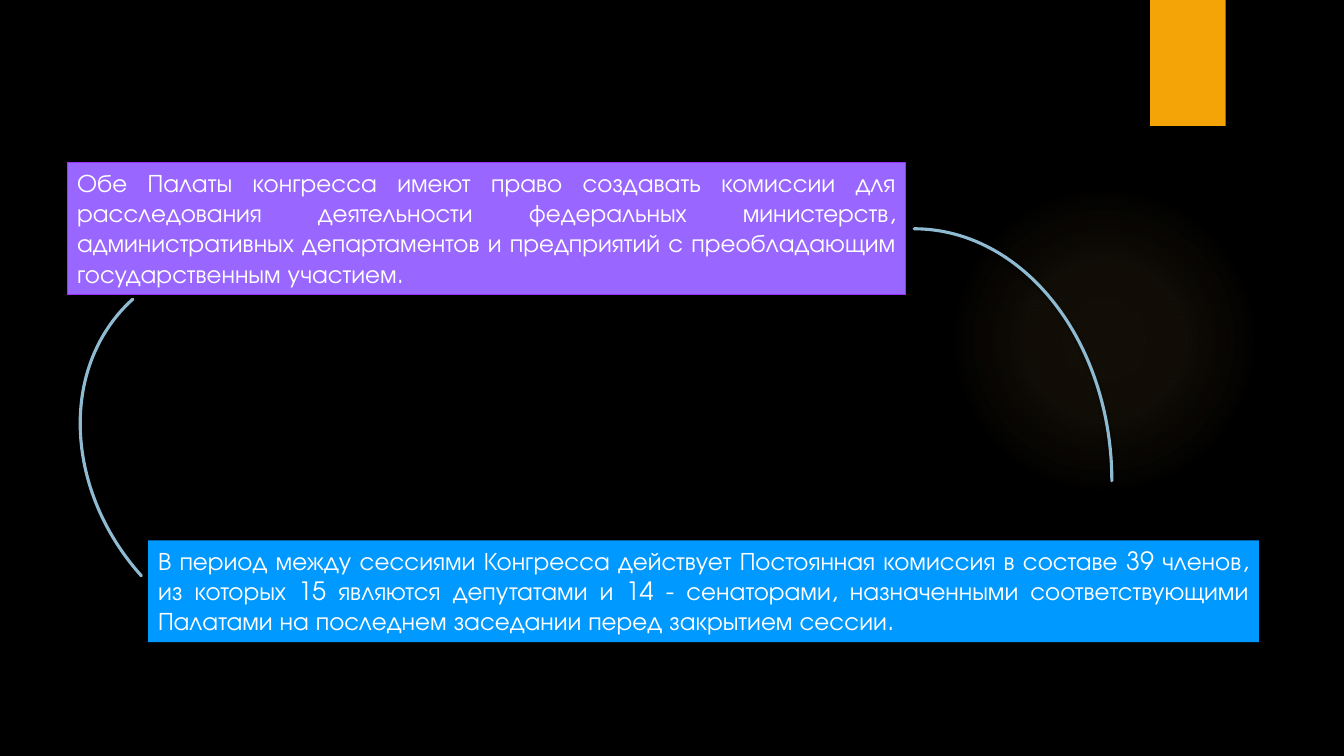
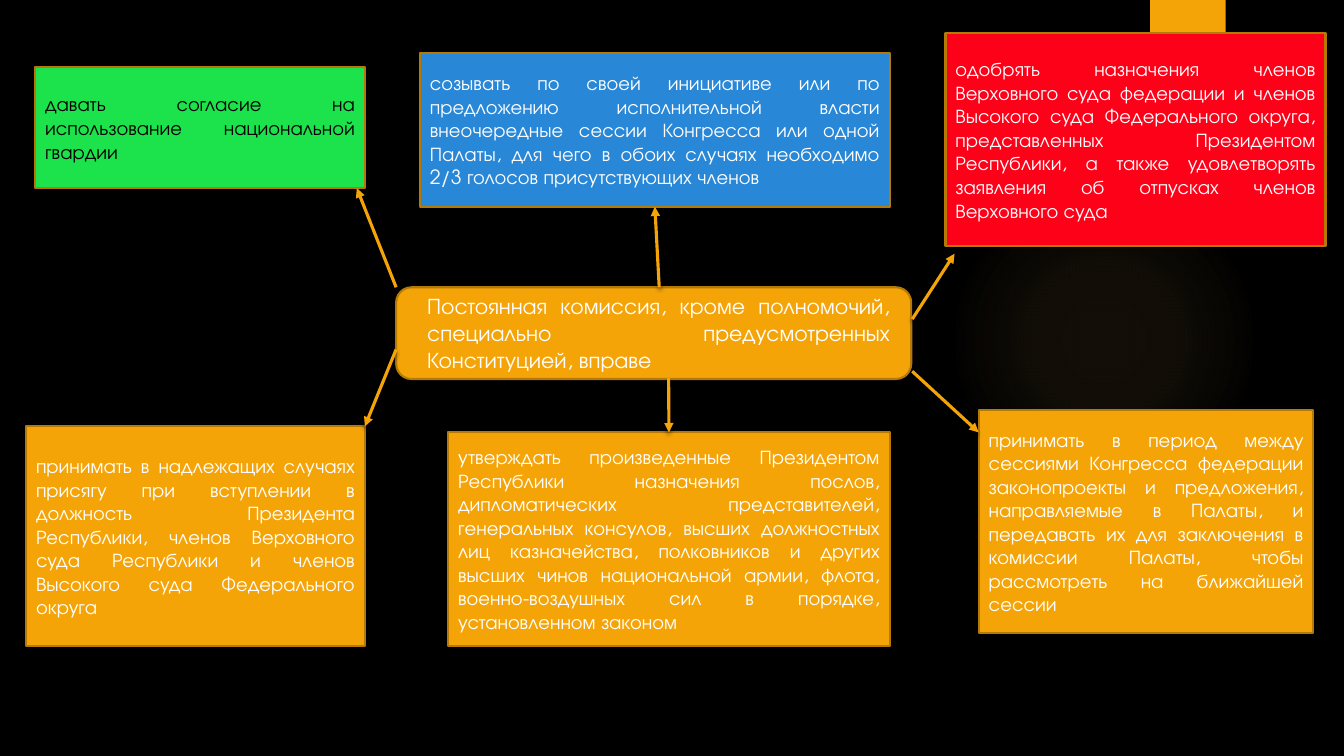
from dataclasses import dataclass
from typing import Optional

from lxml import etree
from pptx import Presentation
from pptx.dml.color import RGBColor
from pptx.enum.shapes import MSO_CONNECTOR, MSO_SHAPE
from pptx.enum.text import MSO_ANCHOR, MSO_AUTO_SIZE, PP_ALIGN
from pptx.oxml import parse_xml
from pptx.oxml.ns import nsdecls, qn
from pptx.util import Inches, Pt

RECTANGLE = MSO_SHAPE.RECTANGLE
ROUNDED = MSO_SHAPE.ROUNDED_RECTANGLE
ELLIPSE = MSO_SHAPE.OVAL
ARC = MSO_SHAPE.ARC
STRAIGHT = MSO_CONNECTOR.STRAIGHT
TOP, MIDDLE = MSO_ANCHOR.TOP, MSO_ANCHOR.MIDDLE
JUSTIFY = PP_ALIGN.JUSTIFY
GROW, FIXED = MSO_AUTO_SIZE.SHAPE_TO_FIT_TEXT, MSO_AUTO_SIZE.NONE
TOP_SIDE, BOTTOM_SIDE = 0, 2

COLORS = {
    "black": "000000",
    "white": "FFFFFF",
    "amber": "F5A408",
    "bronze": "B57906",
    "glow": "FAC96A",
    "violet": "9966FF",
    "purple": "9933FF",
    "azure": "0099FF",
    "mist": "8EBBD2",
    "green": "1CE24B",
    "blue": "2887D6",
    "red": "FD0119",
}
FONT = "TeX Gyre Adventor"
SLIDE_WIDTH, SLIDE_HEIGHT = Inches(13.333), Inches(7.5)
COLUMNS, ROWS = 80, 45
GLOW_STOPS = ((0, 7), (36, 6), (69, 0))


@dataclass(frozen=True)
class Area:
    column: float
    row: float
    columns: float
    rows: float

    def lengths(self) -> tuple[int, int, int, int]:
        return (across(self.column), down(self.row),
                across(self.columns), down(self.rows))


@dataclass(frozen=True)
class Panel:
    area: Area
    text: str = ""
    fill: Optional[str] = "amber"
    outline: Optional[str] = "bronze"
    outline_width: float = 1.5
    color: str = "white"
    size: int = 14
    anchor: MSO_ANCHOR = MIDDLE
    auto_size: MSO_AUTO_SIZE = FIXED
    kind: MSO_SHAPE = RECTANGLE


@dataclass(frozen=True)
class Curve:
    area: Area
    rotation: float = 0


@dataclass(frozen=True)
class Arrow:
    start: tuple[float, float]
    end: tuple[float, float]
    target: str = ""
    side: int = TOP_SIDE


COMMISSIONS = (
    Panel(Area(4, 9.66, 49.92, 7.86),
          "Обе Палаты конгресса имеют право создавать комиссии для расследования "
          "деятельности федеральных министерств, административных департаментов и "
          "предприятий с преобладающим государственным участием.",
          "violet", "purple", 0.75, size=18, anchor=TOP, auto_size=GROW),
    Panel(Area(8.82, 32.16, 66.12, 6.06),
          "В период между сессиями Конгресса действует Постоянная комиссия в составе "
          "39 членов, из которых 15 являются депутатами и 14 - сенаторами, "
          "назначенными соответствующими Палатами на последнем заседании перед "
          "закрытием сессии.",
          "azure", None, size=18, anchor=TOP, auto_size=GROW),
)
CURVES = (
    Curve(Area(42.66, 13.62, 23.52, 30)),
    Curve(Area(3.72, 16.56, 25.2, 21.24), 228.1),
)
POWERS = {
    "hub": Panel(Area(23.58, 17.1, 30.66, 5.46), kind=ROUNDED),
    "hub text": Panel(
        Area(24.84, 17.1, 28.74, 5.46),
        "Постоянная комиссия, кроме полномочий, специально предусмотренных "
        "Конституцией, вправе",
        None, None, size=16, anchor=TOP, auto_size=GROW),
    "oath": Panel(
        Area(1.56, 25.38, 20.16, 13.08),
        "принимать в надлежащих случаях присягу при вступлении в должность "
        "Президента Республики, членов Верховного суда Республики и членов "
        "Высокого суда Федерального округа"),
    "guard": Panel(
        Area(2.1, 4, 19.62, 7.2),
        "давать согласие на использование национальной гвардии",
        "green", color="black"),
    "sessions": Panel(
        Area(25, 3.18, 27.96, 9.12),
        "созывать по своей инициативе или по предложению исполнительной власти "
        "внеочередные сессии Конгресса или одной Палаты, для чего в обоих случаях "
        "необходимо 2/3 голосов присутствующих членов", "blue"),
    "envoys": Panel(
        Area(26.68, 25.74, 26.28, 12.72),
        "утверждать произведенные Президентом Республики назначения послов, "
        "дипломатических представителей, генеральных консулов, высших должностных "
        "лиц казначейства, полковников и других высших чинов национальной армии, "
        "флота, военно-воздушных сил в порядке, установленном законом"),
    "bills": Panel(
        Area(58.26, 24.42, 19.92, 13.26),
        "принимать в период между сессиями Конгресса федерации законопроекты и "
        "предложения, направляемые в Палаты, и передавать их для заключения в "
        "комиссии Палаты, чтобы рассмотреть на ближайшей сессии"),
    "judges": Panel(
        Area(56.28, 1.98, 22.62, 12.66),
        "одобрять назначения членов Верховного суда федерации и членов Высокого "
        "суда Федерального округа, представленных Президентом Республики, а также "
        "удовлетворять заявления об отпусках членов Верховного суда", "red"),
}
ARROWS = (
    Arrow((39.24, 17.1), (39, 12.3), "sessions", BOTTOM_SIDE),
    Arrow((39.8, 22.5), (39.84, 25.74), "envoys", TOP_SIDE),
    Arrow((23.58, 17.1), (21.24, 11.2)),
    Arrow((54.3, 19), (56.82, 15.1)),
    Arrow((23.58, 20.8), (21.72, 25.38)),
    Arrow((54.3, 22.1), (58.26, 25.74)),
)


def across(columns: float) -> int:
    return round(SLIDE_WIDTH * columns / COLUMNS)


def down(rows: float) -> int:
    return round(SLIDE_HEIGHT * rows / ROWS)


def rgb(name: str) -> RGBColor:
    return RGBColor.from_string(COLORS[name])


def apply(target, values: dict) -> None:
    for name, value in values.items():
        setattr(target, name, value)


def paint(shape, fill: Optional[str]) -> None:
    if fill:
        shape.fill.solid()
        shape.fill.fore_color.rgb = rgb(fill)
    else:
        shape.fill.background()


def stroke(shape, color: Optional[str], width: float) -> None:
    if color:
        shape.line.color.rgb = rgb(color)
        shape.line.width = Pt(width)
    else:
        shape.line.fill.background()


def cast_shadow(shape) -> None:
    properties = shape.element.spPr
    for effects in properties.findall(qn("a:effectLst")):
        properties.remove(effects)
    properties.append(parse_xml(
        f'<a:effectLst {nsdecls("a")}><a:outerShdw blurRad="{Pt(3)}" dist="{Pt(2)}" '
        f'dir="5400000" rotWithShape="0"><a:srgbClr val="{COLORS["black"]}">'
        '<a:alpha val="45000"/></a:srgbClr></a:outerShdw></a:effectLst>'))


def add_plain(page, kind: MSO_SHAPE, area: Area, fill: Optional[str],
              outline: Optional[str] = None, width: float = 0):
    shape = page.shapes.add_shape(kind, *area.lengths())
    shape.shadow.inherit = False
    paint(shape, fill)
    stroke(shape, outline, width)
    return shape


def write(box, panel: Panel) -> None:
    frame = box.text_frame
    apply(frame, {"word_wrap": True, "auto_size": panel.auto_size,
                  "vertical_anchor": panel.anchor})
    para = frame.paragraphs[0]
    para.alignment = JUSTIFY
    span = para.add_run()
    span.text = panel.text
    apply(span.font, {"name": FONT, "size": Pt(panel.size)})
    span.font.color.rgb = rgb(panel.color)


def add_panel(page, panel: Panel):
    if panel.fill:
        box = add_plain(page, panel.kind, panel.area, panel.fill,
                        panel.outline, panel.outline_width)
    else:
        box = page.shapes.add_textbox(*panel.area.lengths())
    if panel.text:
        write(box, panel)
    return box


def add_curve(page, curve: Curve) -> None:
    shape = add_plain(page, ARC, curve.area, None, "mist", 2.25)
    shape.rotation = curve.rotation
    shape.element.spPr.get_or_add_ln().set("cap", "rnd")
    cast_shadow(shape)


def add_arrow(page, arrow: Arrow, boxes: dict) -> None:
    (left, top), (right, bottom) = arrow.start, arrow.end
    line = page.shapes.add_connector(
        STRAIGHT, across(left), down(top), across(right), down(bottom))
    if arrow.target:
        line.end_connect(boxes[arrow.target], arrow.side)
    stroke(line, "amber", 2.25)
    outline = line.element.spPr.get_or_add_ln()
    etree.SubElement(outline, qn("a:tailEnd"), type="triangle")
    cast_shadow(line)


def decorate_master(deck, page) -> None:
    master = deck.slide_master
    master.background.fill.solid()
    master.background.fill.fore_color.rgb = rgb("black")
    glow = add_plain(page, ELLIPSE, Area(56.46, 11, 18.48, 18.48), None)
    stops = "".join(
        f'<a:gs pos="{place * 1000}"><a:srgbClr val="{COLORS["glow"]}">'
        f'<a:alpha val="{alpha * 1000}"/></a:srgbClr></a:gs>'
        for place, alpha in GLOW_STOPS)
    properties = glow.element.spPr
    properties.replace(properties.find(qn("a:noFill")), parse_xml(
        f'<a:gradFill {nsdecls("a")} rotWithShape="1"><a:gsLst>{stops}</a:gsLst>'
        '<a:path path="circle"><a:fillToRect l="50000" t="50000" r="50000" '
        'b="50000"/></a:path></a:gradFill>'))
    band = add_plain(page, RECTANGLE, Area(68.46, 0, 4.5, 7.5), "amber")
    cast_shadow(band)
    for number, shape in enumerate((glow, band), start=100):
        shape.element.nvSpPr.cNvPr.set("id", str(number))
        master.shapes.element.append(shape.element)


def main() -> None:
    deck = Presentation()
    apply(deck, {"slide_width": SLIDE_WIDTH, "slide_height": SLIDE_HEIGHT})
    blank = deck.slide_layouts[6]
    commissions_page = deck.slides.add_slide(blank)
    decorate_master(deck, commissions_page)
    for panel in COMMISSIONS:
        add_panel(commissions_page, panel)
    for curve in CURVES:
        add_curve(commissions_page, curve)

    powers_page = deck.slides.add_slide(blank)
    boxes = {name: add_panel(powers_page, panel) for name, panel in POWERS.items()}
    for arrow in ARROWS:
        add_arrow(powers_page, arrow, boxes)
    deck.save("out.pptx")


if __name__ == "__main__":
    main()
